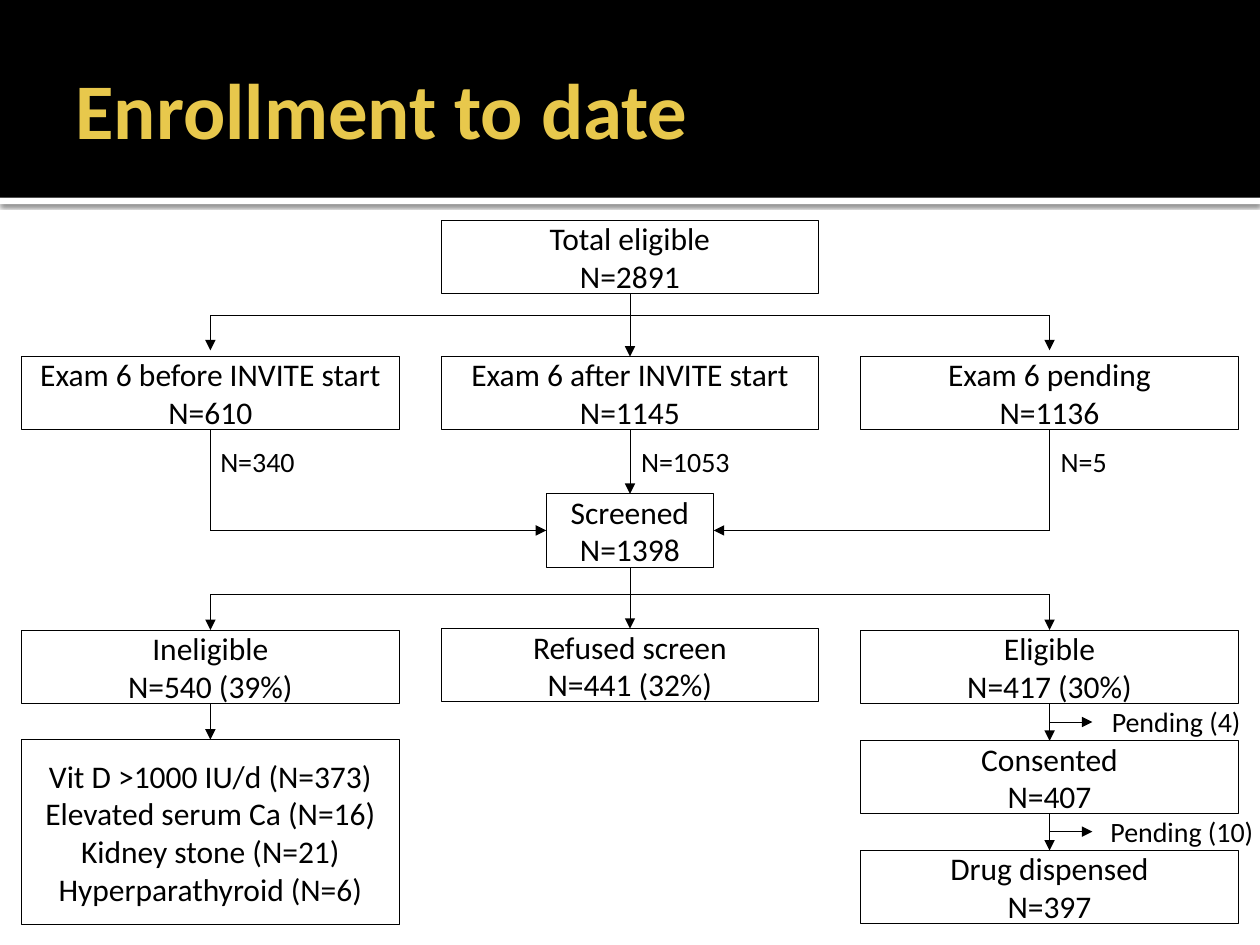
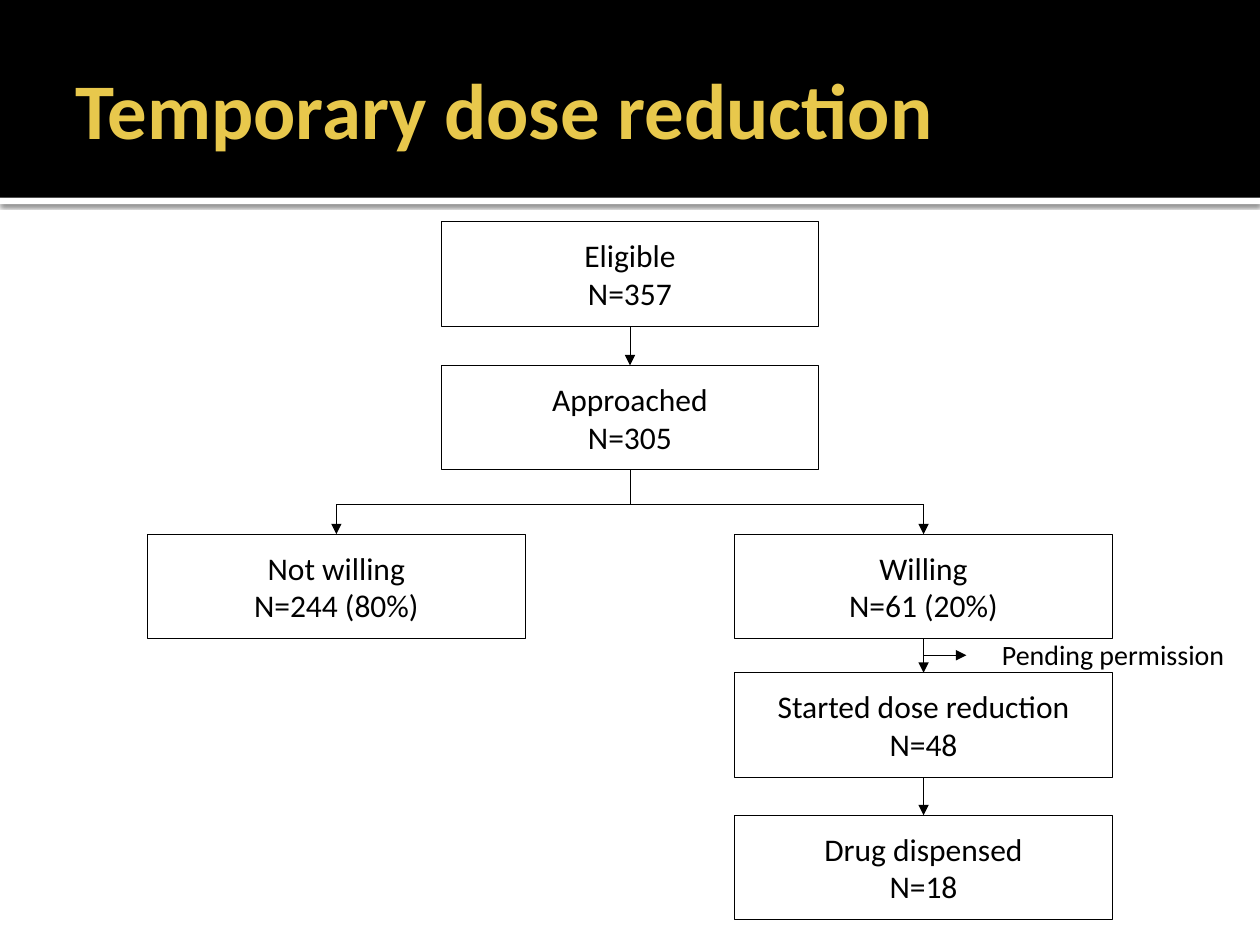
from dataclasses import dataclass

from lxml.etree import SubElement
from pptx import Presentation
from pptx.dml.color import RGBColor
from pptx.enum.shapes import MSO_CONNECTOR as Connector, MSO_SHAPE as Preset
from pptx.enum.text import MSO_ANCHOR as Anchor, MSO_AUTO_SIZE as AutoSize, PP_ALIGN as Align
from pptx.oxml.ns import qn
from pptx.util import Inches, Pt

# Shared look
BLACK = RGBColor(0x00, 0x00, 0x00)
WHITE = RGBColor(0xFF, 0xFF, 0xFF)
GOLD = RGBColor(0xE8, 0xC8, 0x4C)
FONT = "Calibri"
LINE_WIDTH = Pt(0.5)
SLIDE_WIDTH, SLIDE_HEIGHT = 10, 7.5
BAND_HEIGHT, STRIP_HEIGHT = 1.57, 0.05
BRANCH_LENGTH = 0.34


# Parts of a flow chart, in inches
@dataclass(frozen=True)
class Box:
    center: float
    top: float
    text: str
    width: float = 3
    height: float = 0.58

    @property
    def left(self) -> float:
        return self.center - self.width / 2

    @property
    def right(self) -> float:
        return self.center + self.width / 2

    @property
    def bottom(self) -> float:
        return self.top + self.height

    @property
    def middle(self) -> float:
        return self.top + self.height / 2


@dataclass(frozen=True)
class Label:
    left: float
    top: float
    width: float
    text: str
    height: float = 0.29
    align: Align = Align.LEFT


def write_text(shape, text: str, size: float, color: RGBColor, align: Align, bold: bool = False) -> None:
    text_frame = shape.text_frame
    text_frame.text = text
    text_frame.word_wrap = True
    text_frame.auto_size = AutoSize.NONE
    text_frame.vertical_anchor = Anchor.MIDDLE
    for paragraph in text_frame.paragraphs:
        paragraph.alignment = align
        for run in paragraph.runs:
            run.font.name = FONT
            run.font.size = Pt(size)
            run.font.bold = bold
            run.font.color.rgb = color


def draw_band(slide, top: float, height: float, color: RGBColor):
    band = slide.shapes.add_shape(Preset.RECTANGLE, 0, Inches(top), Inches(SLIDE_WIDTH), Inches(height))
    band.shadow.inherit = False
    band.fill.solid()
    band.fill.fore_color.rgb = color
    band.line.fill.background()
    return band


def add_soft_shadow(shape) -> None:
    effects = shape.element.spPr.find(qn("a:effectLst"))
    shadow = SubElement(effects, qn("a:outerShdw"), blurRad=str(Pt(2.5)), dist=str(Pt(0.8)),
                        dir="5400000", algn="tl", rotWithShape="0")
    color = SubElement(shadow, qn("a:srgbClr"), val=str(BLACK))
    SubElement(color, qn("a:alpha"), val="60000")


def add_titled_slide(presentation, title_text: str):
    slide = presentation.slides.add_slide(presentation.slide_layouts[5])
    add_soft_shadow(draw_band(slide, BAND_HEIGHT, STRIP_HEIGHT, WHITE))
    draw_band(slide, 0, BAND_HEIGHT, BLACK)

    # Bring the title in front of the bands
    title = slide.shapes.title
    title.element.getparent().append(title.element)
    title.left, title.top = Inches(0.5), Inches(0.17)
    title.width, title.height = Inches(9), Inches(1.37)
    write_text(title, title_text, 45, GOLD, Align.LEFT, bold=True)
    text_frame = title.text_frame
    text_frame.margin_left = Inches(0.1)
    text_frame.margin_top = text_frame.margin_right = text_frame.margin_bottom = Inches(0.05)
    return slide


def draw_box(slide, box: Box) -> None:
    shape = slide.shapes.add_shape(Preset.RECTANGLE, Inches(box.left), Inches(box.top),
                                   Inches(box.width), Inches(box.height))
    shape.shadow.inherit = False
    shape.fill.background()
    shape.line.color.rgb = BLACK
    shape.line.width = LINE_WIDTH
    write_text(shape, box.text, 18, BLACK, Align.CENTER)


def draw_label(slide, label: Label) -> None:
    text_box = slide.shapes.add_textbox(Inches(label.left), Inches(label.top),
                                        Inches(label.width), Inches(label.height))
    write_text(text_box, label.text, 16, BLACK, label.align)


def draw_line(slide, x1: float, y1: float, x2: float, y2: float, arrow: bool = True) -> None:
    connector = slide.shapes.add_connector(Connector.STRAIGHT, Inches(x1), Inches(y1), Inches(x2), Inches(y2))
    connector.line.color.rgb = BLACK
    connector.line.width = LINE_WIDTH
    if arrow:
        SubElement(connector.line._get_or_add_ln(), qn("a:tailEnd"), type="triangle")
    SubElement(connector.element.spPr, qn("a:effectLst"))


def link_down(slide, upper: Box, lower: Box) -> None:
    draw_line(slide, upper.center, upper.bottom, upper.center, lower.top)


def draw_fork(slide, left: float, right: float, rail: float, tip: float) -> None:
    draw_line(slide, left, rail, right, rail, arrow=False)
    for x in (left, right):
        draw_line(slide, x, rail, x, tip)


def draw_branch(slide, x: float, y: float) -> None:
    draw_line(slide, x, y, x + BRANCH_LENGTH, y)


def draw_enrollment(presentation) -> None:
    slide = add_titled_slide(presentation, "Enrollment to date")
    left, center, right = 1.67, 5, 8.33

    # Boxes
    total = Box(center, 1.75, "Total eligible\nN=2891")
    before = Box(left, 2.83, "Exam 6 before INVITE start\nN=610")
    after = Box(center, 2.83, "Exam 6 after INVITE start\nN=1145")
    pending = Box(right, 2.83, "Exam 6 pending\nN=1136")
    screened = Box(center, 3.92, "Screened\nN=1398", width=1.33)
    ineligible = Box(left, 5, "Ineligible\nN=540 (39%)")
    refused = Box(center, 4.99, "Refused screen\nN=441 (32%)")
    eligible = Box(right, 5, "Eligible\nN=417 (30%)")
    consented = Box(right, 5.88, "Consented\nN=407")
    dispensed = Box(right, 6.75, "Drug dispensed\nN=397")
    reasons = Box(left, 5.87, "Vit D >1000 IU/d (N=373)\nElevated serum Ca (N=16)\n"
                  "Kidney stone (N=21)\nHyperparathyroid (N=6)", height=1.47)
    for box in (total, before, after, pending, screened, ineligible, refused,
                eligible, consented, dispensed, reasons):
        draw_box(slide, box)

    # Straight links and forks
    for upper, lower in ((total, after), (after, screened), (screened, refused),
                         (ineligible, reasons), (eligible, consented), (consented, dispensed)):
        link_down(slide, upper, lower)
    draw_fork(slide, left, right, 2.5, 2.78)
    draw_fork(slide, left, right, 4.72, eligible.top)

    # Outer exam groups join the screened box from the sides
    for group, edge in ((before, screened.left), (pending, screened.right)):
        draw_line(slide, group.center, group.bottom, group.center, screened.middle, arrow=False)
        draw_line(slide, group.center, screened.middle, edge, screened.middle)

    # Pending branches and counts
    for y in (5.73, 6.6):
        draw_branch(slide, right, y)
    for label in (
        Label(1.65, 3.52, 0.84, "N=340"),
        Label(4.99, 3.52, 1.26, "N=1053"),
        Label(8.32, 3.52, 0.84, "N=5"),
        Label(8.67, 5.58, 1.33, "Pending (4)", align=Align.CENTER),
        Label(8.67, 6.44, 1.42, "Pending (10)", height=0.31, align=Align.CENTER),
    ):
        draw_label(slide, label)


def draw_dose_reduction(presentation) -> None:
    slide = add_titled_slide(presentation, "Temporary dose reduction")
    left, center, right = 2.67, 5, 7.33
    height, rail = 0.83, 4

    # Boxes
    eligible = Box(center, 1.76, "Eligible\nN=357", height=height)
    approached = Box(center, 2.9, "Approached\nN=305", height=height)
    unwilling = Box(left, 4.24, "Not willing\nN=244 (80%)", height=height)
    willing = Box(right, 4.24, "Willing\nN=61 (20%)", height=height)
    started = Box(right, 5.34, "Started dose reduction\nN=48", height=height)
    dispensed = Box(right, 6.47, "Drug dispensed\nN=18", height=height)
    for box in (eligible, approached, unwilling, willing, started, dispensed):
        draw_box(slide, box)

    # Links
    for upper, lower in ((eligible, approached), (willing, started), (started, dispensed)):
        link_down(slide, upper, lower)
    draw_line(slide, center, approached.bottom, center, rail, arrow=False)
    draw_fork(slide, left, right, rail, willing.top)
    draw_branch(slide, right, 5.2)
    draw_label(slide, Label(7.67, 5.04, 2.33, "Pending permission", height=0.31, align=Align.CENTER))


def main() -> None:
    presentation = Presentation()
    presentation.slide_width = Inches(SLIDE_WIDTH)
    presentation.slide_height = Inches(SLIDE_HEIGHT)
    draw_enrollment(presentation)
    draw_dose_reduction(presentation)
    presentation.save("out.pptx")


if __name__ == "__main__":
    main()
